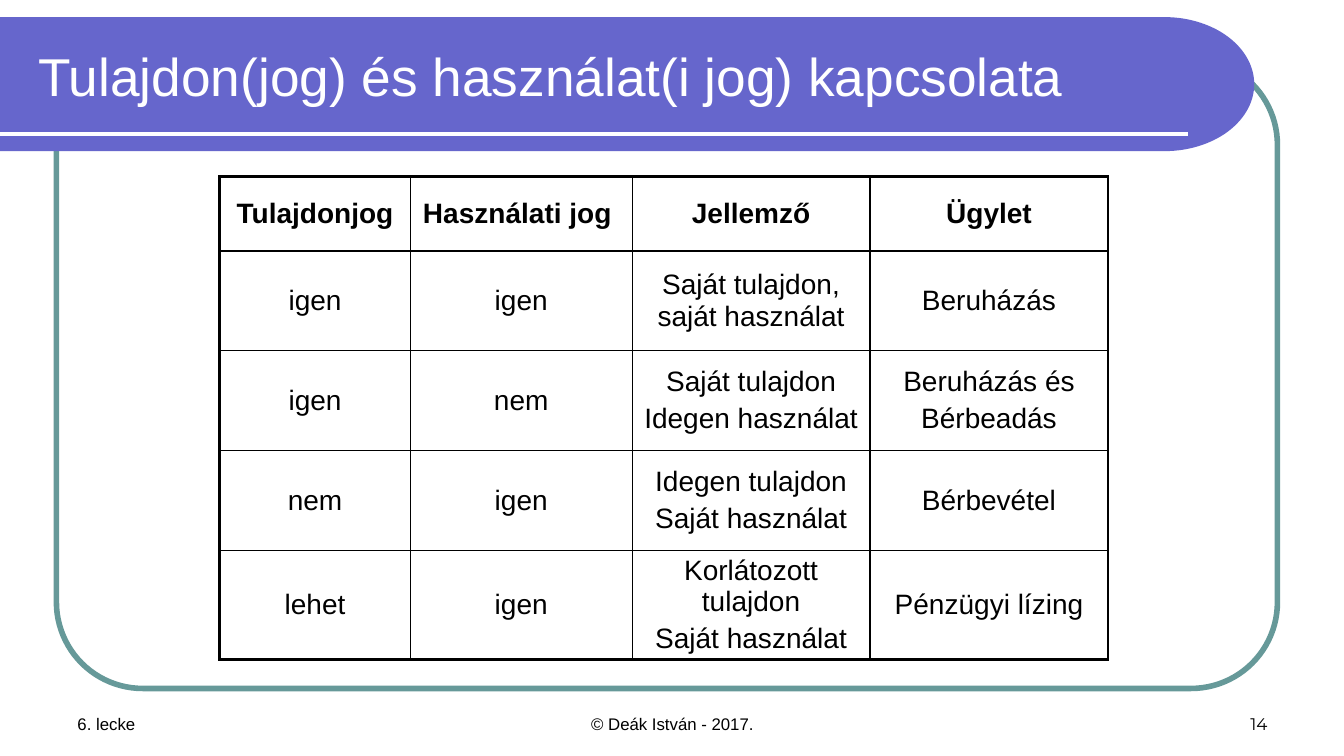
"""Build the slide on how ownership relates to the right of use."""
from dataclasses import dataclass
from math import cos, pi, sin

from lxml.etree import SubElement
from pptx import Presentation
from pptx.dml.color import RGBColor
from pptx.enum.shapes import MSO_CONNECTOR, MSO_SHAPE
from pptx.enum.text import MSO_ANCHOR, MSO_AUTO_SIZE, PP_ALIGN
from pptx.oxml import parse_xml
from pptx.oxml.ns import nsdecls, qn
from pptx.util import Inches, Pt

TITLE = "Tulajdon(jog) és használat(i jog) kapcsolata"
RIGHTS = [
    ["Tulajdonjog", "Használati jog ", "Jellemző", "Ügylet"],
    ["igen", "igen", "Saját tulajdon, saját használat", "Beruházás"],
    ["igen", "nem", "Saját tulajdon\nIdegen használat", "Beruházás és\nBérbeadás"],
    ["nem", "igen", "Idegen tulajdon\nSaját használat", "Bérbevétel"],
    ["lehet", "igen", "Korlátozott tulajdon\nSaját használat", "Pénzügyi lízing"],
]
COLUMN_WIDTHS = [1.89, 2.2, 2.36, 2.36]
ROW_HEIGHTS = [0.74] + [0.99] * 4
FOOTERS = [
    ("6. lecke", 0.67, 3.11, PP_ALIGN.LEFT, "Arial"),
    ("© Deák István - 2017.", 4.56, 4.22, PP_ALIGN.CENTER, "Arial"),
    ("14", 9.56, 3.11, PP_ALIGN.RIGHT, "Montserrat"),
]


@dataclass(frozen=True)
class Theme:
    banner: str = "6666CC"
    frame: str = "669999"
    ink: str = "000000"
    paper: str = "FFFFFF"
    font: str = "Arial"
    title_size: float = 38
    table_size: float = 20
    footer_size: float = 12
    outer_border: float = 2.25
    inner_border: float = 1


THEME = Theme()


def rgb(value):
    return RGBColor.from_string(value)


def style(paragraph, size, color, align, font=THEME.font, bold=False):
    paragraph.alignment = align
    paragraph.font.name = font
    paragraph.font.size = Pt(size)
    paragraph.font.bold = bold
    paragraph.font.color.rgb = rgb(color)


def add_frame(slide):
    frame = slide.shapes.add_shape(
        MSO_SHAPE.ROUNDED_RECTANGLE, Inches(0.56), Inches(0.58), Inches(12.11), Inches(6.25))
    frame.adjustments[0] = 0.137
    frame.shadow.inherit = False
    frame.fill.background()
    frame.line.color.rgb = rgb(THEME.frame)
    frame.line.width = Pt(4)


def add_banner(slide, top=0.17, bottom=1.5, bend=11.55, right=12.44, steps=60):
    middle, radius = (top + bottom) / 2, (bottom - top) / 2
    angles = [pi * step / steps - pi / 2 for step in range(steps + 1)]
    curve = [(Inches(bend + (right - bend) * cos(a)), Inches(middle + radius * sin(a)))
             for a in angles]
    outline = slide.shapes.build_freeform(0, Inches(top))
    outline.add_line_segments(curve + [(0, Inches(bottom))], close=True)
    banner = outline.convert_to_shape()
    banner.shadow.inherit = False
    banner.fill.solid()
    banner.fill.fore_color.rgb = rgb(THEME.banner)
    banner.line.fill.background()

    rule = slide.shapes.add_connector(
        MSO_CONNECTOR.STRAIGHT, 0, Inches(1.33), Inches(11.78), Inches(1.33))
    rule.line.color.rgb = rgb(THEME.paper)
    rule.line.width = Pt(3)
    SubElement(rule.element.spPr, qn("a:effectLst"))


def add_title(slide):
    title = slide.shapes.title
    title.left, title.top, title.width, title.height = map(Inches, (0.28, 0.25, 11.69, 1))
    title.element.getparent().append(title.element)
    title.text_frame.text = TITLE
    title.text_frame.auto_size = MSO_AUTO_SIZE.NONE
    title.text_frame.vertical_anchor = MSO_ANCHOR.MIDDLE
    style(title.text_frame.paragraphs[0], THEME.title_size, THEME.paper, PP_ALIGN.LEFT)


def set_borders(cell, outer_sides):
    properties = cell._tc.get_or_add_tcPr()
    for position, side in enumerate("LRTB"):
        points = THEME.outer_border if side in outer_sides else THEME.inner_border
        properties.insert(position, parse_xml(
            f'<a:ln{side} {nsdecls("a")} w="{Pt(points)}"><a:solidFill>'
            f'<a:srgbClr val="{THEME.ink}"/></a:solidFill></a:ln{side}>'))


def add_rights_table(slide):
    last_row, last_column = len(RIGHTS) - 1, len(COLUMN_WIDTHS) - 1
    table = slide.shapes.add_table(
        len(RIGHTS), len(COLUMN_WIDTHS), Inches(2.18), Inches(1.75),
        Inches(sum(COLUMN_WIDTHS)), Inches(sum(ROW_HEIGHTS))).table
    table.first_row = table.horz_banding = False
    for column, width in zip(table.columns, COLUMN_WIDTHS):
        column.width = Inches(width)
    for row, height in zip(table.rows, ROW_HEIGHTS):
        row.height = Inches(height)
    for r, entries in enumerate(RIGHTS):
        for c, entry in enumerate(entries):
            cell = table.cell(r, c)
            cell.text = entry
            cell.vertical_anchor = MSO_ANCHOR.MIDDLE
            cell.fill.background()
            edges = {"L": c == 0, "R": c == last_column, "T": r == 0, "B": r == last_row}
            set_borders(cell, [side for side, outer in edges.items() if outer])
            for paragraph in cell.text_frame.paragraphs:
                style(paragraph, THEME.table_size, THEME.ink, PP_ALIGN.CENTER, bold=r == 0)
                paragraph.space_before = Pt(0.2 * THEME.table_size)


def add_footers(slide):
    for wording, left, width, align, font in FOOTERS:
        footer = slide.shapes.add_textbox(
            Inches(left), Inches(6.83), Inches(width), Inches(0.5)).text_frame
        footer.word_wrap = True
        footer.vertical_anchor = MSO_ANCHOR.BOTTOM
        footer.text = wording
        style(footer.paragraphs[0], THEME.footer_size, THEME.ink, align, font)


def main():
    deck = Presentation()
    deck.slide_width, deck.slide_height = Inches(13.33), Inches(7.5)
    slide = deck.slides.add_slide(deck.slide_layouts[5])
    add_frame(slide)
    add_banner(slide)
    add_footers(slide)
    add_title(slide)
    add_rights_table(slide)
    deck.save("out.pptx")


if __name__ == "__main__":
    main()
